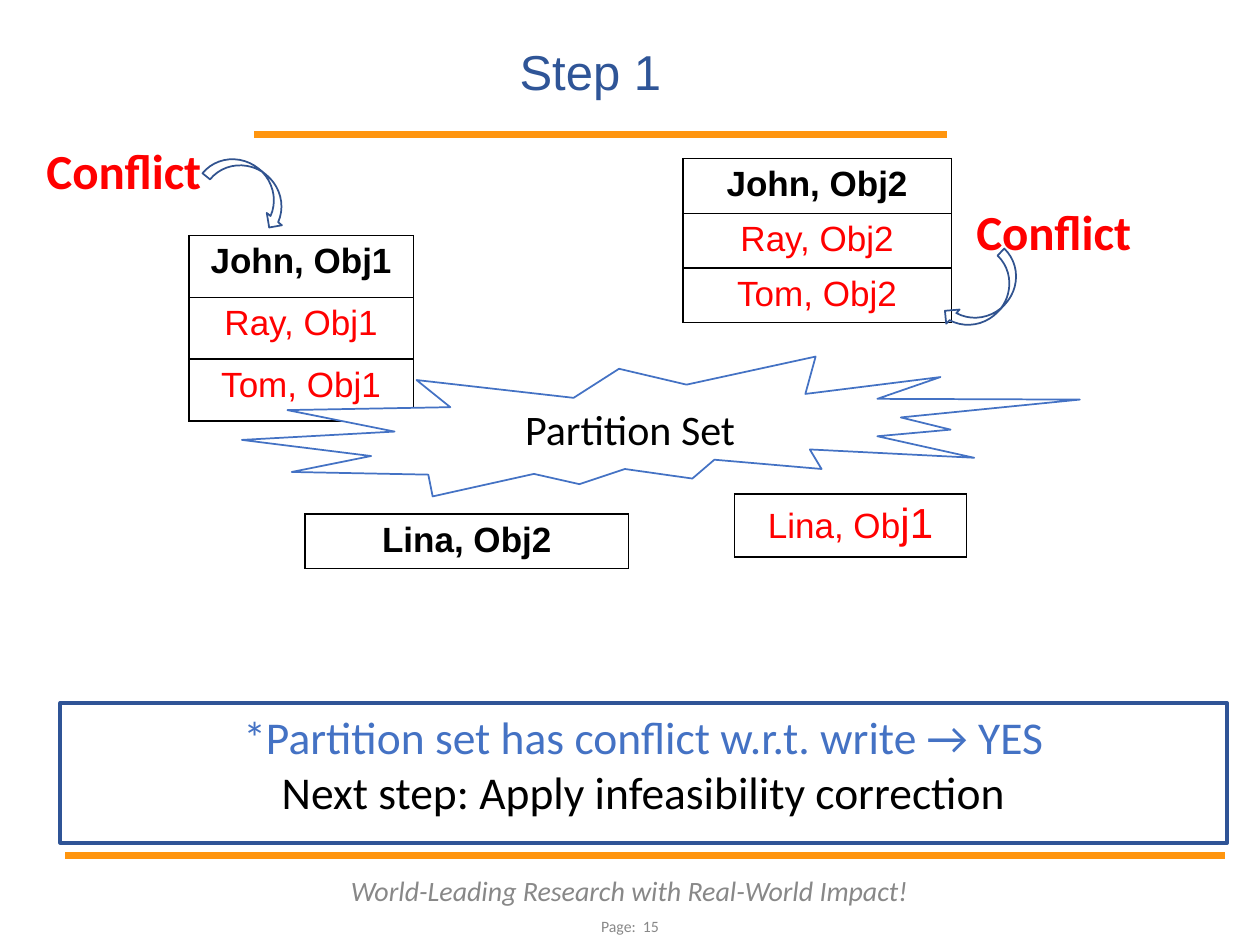
from lxml import etree
from pptx import Presentation
from pptx.dml.color import RGBColor
from pptx.enum import shapes, text
from pptx.oxml import ns
from pptx.util import Inches, Pt

BLACK, RED, ORANGE, GREY = "000000", "FF0000", "FF950E", "888888"
TOP, MIDDLE, BOTTOM = (text.MSO_ANCHOR.TOP, text.MSO_ANCHOR.MIDDLE,
                       text.MSO_ANCHOR.BOTTOM)


def rgb(value):
    return RGBColor.from_string(value)


def inches(box):
    return [Inches(length) for length in box]


def style(font, size, color, name="Calibri", bold=False, italic=False):
    font.size, font.name = Pt(size), name
    font.bold, font.italic = bold, italic
    font.color.rgb = rgb(color)


def add_label(slide, box, words, anchor=MIDDLE, align=text.PP_ALIGN.CENTER, **font):
    frame = slide.shapes.add_textbox(*inches(box)).text_frame
    frame.word_wrap = True
    frame.vertical_anchor = anchor
    frame.text = words
    line = frame.paragraphs[0]
    line.alignment = align
    style(line.runs[0].font, **font)
    return line


def add_outlined(slide, kind, box, line_color, width=1, fill=None):
    outlined = slide.shapes.add_shape(kind, *inches(box))
    outlined.shadow.inherit = False
    if fill:
        outlined.fill.solid()
        outlined.fill.fore_color.rgb = rgb(fill)
    else:
        outlined.fill.background()
    outlined.line.color.rgb = rgb(line_color)
    outlined.line.width = Pt(width)
    return outlined


def add_rule(slide, left, top, width):
    rule = slide.shapes.add_connector(
        shapes.MSO_CONNECTOR.STRAIGHT, *inches((left, top, left + width, top)))
    rule.line.color.rgb = rgb(ORANGE)
    rule.line.width = Pt(4)
    etree.SubElement(rule._element.spPr, ns.qn("a:effectLst"))


def add_borders(cell):
    properties = cell._tc.get_or_add_tcPr()
    for side in ("lnL", "lnR", "lnT", "lnB"):
        border = etree.SubElement(properties, ns.qn(f"a:{side}"), w=str(Pt(0.96)))
        fill = etree.SubElement(border, ns.qn("a:solidFill"))
        etree.SubElement(fill, ns.qn("a:srgbClr"), val=BLACK)


def add_partition(slide, box, rows):
    """Each row is a list of (words, size, color, bold) runs."""
    table = slide.shapes.add_table(len(rows), 1, *inches(box)).table
    table.first_row = table.horz_banding = False
    for index, runs in enumerate(rows):
        table.rows[index].height = Inches(box[3] / len(rows))
        cell = table.cell(index, 0)
        add_borders(cell)
        cell.fill.background()
        cell.margin_left = cell.margin_right = Inches(0.07)
        cell.margin_top = cell.margin_bottom = Inches(0.05)
        line = cell.text_frame.paragraphs[0]
        line.alignment = text.PP_ALIGN.CENTER
        for words, size, color, bold in runs:
            run = line.add_run()
            run.text = words
            style(run.font, size, color, "Arial", bold)


def add_seal(slide, box):
    seal = add_outlined(slide, shapes.MSO_SHAPE.EXPLOSION2, box, "4472C4", fill="FFFFFF")
    frame = seal.text_frame
    frame.vertical_anchor = MIDDLE
    frame.text = "Partition Set"
    frame.paragraphs[0].alignment = text.PP_ALIGN.CENTER
    style(frame.paragraphs[0].runs[0].font, 24, BLACK)


def add_conclusion(slide, box):
    panel = add_outlined(slide, shapes.MSO_SHAPE.RECTANGLE, box, "2F5496", 2.25)
    frame = panel.text_frame
    frame.vertical_anchor = TOP
    frame.text = ("*Partition set has conflict w.r.t. write → YES\n"
                  "Next step: Apply infeasibility correction")
    for line, color in zip(frame.paragraphs, ("4472C4", BLACK)):
        line.alignment = text.PP_ALIGN.CENTER
        style(line.runs[0].font, 26, color)


def add_conflict(slide, left, top, arrow_left, arrow_top, rotation):
    add_label(slide, (left, top, 1.49, 0.57), "Conflict", TOP,
              text.PP_ALIGN.LEFT, size=28, color=RED, bold=True)
    arrow = add_outlined(slide, shapes.MSO_SHAPE.CURVED_DOWN_ARROW,
                         (arrow_left, arrow_top, 0.76, 0.31), "31538F")
    arrow.rotation = rotation


def add_footer(slide, left, top, width):
    add_rule(slide, left, top, width)
    add_label(slide, (left + 2.06, top + 0.1, 4.83, 0.36),
              "World-Leading Research with Real-World Impact!",
              size=16, color=GREY, italic=True)
    add_label(slide, (left + 3.54, top + 0.38, 1.88, 0.36), "Page:  15",
              size=9, color=GREY)


def main():
    deck = Presentation()
    deck.slide_width, deck.slide_height = Inches(10), Inches(7.5)
    slide = deck.slides.add_slide(deck.slide_layouts[6])

    add_rule(slide, 2.02, 1.07, 5.5)
    add_footer(slide, 0.52, 6.79, 9.2)

    def user_rows(item):
        return [[(f"{user}, {item}", 20, color, color == BLACK)]
                for user, color in (("John", BLACK), ("Ray", RED), ("Tom", RED))]

    add_partition(slide, (1.5, 1.87, 1.78, 1.47), user_rows("Obj1"))
    add_partition(slide, (5.83, 3.92, 1.84, 0.5),
                  [[("Lina, Ob", 20, RED, False), ("j1", 24, RED, False)]])
    add_partition(slide, (2.42, 4.08, 2.57, 0.43), [[("Lina, Obj2", 20, BLACK, True)]])
    add_partition(slide, (5.42, 1.26, 2.13, 1.3), user_rows("Obj2"))

    add_seal(slide, (1.92, 2.83, 6.65, 1.11))
    add_conclusion(slide, (0.48, 5.58, 9.26, 1.11))
    title = add_label(slide, (1.99, 0.34, 5.39, 0.51), "Step 1", BOTTOM,
                      size=28, color="2F5597", name="Arial")
    title.line_spacing = 0.9
    add_conflict(slide, 0.27, 1.07, 1.62, 1.34, 39.1)
    add_conflict(slide, 7.65, 1.55, 7.44, 2.2, 133.6)
    deck.save("out.pptx")


if __name__ == "__main__":
    main()
